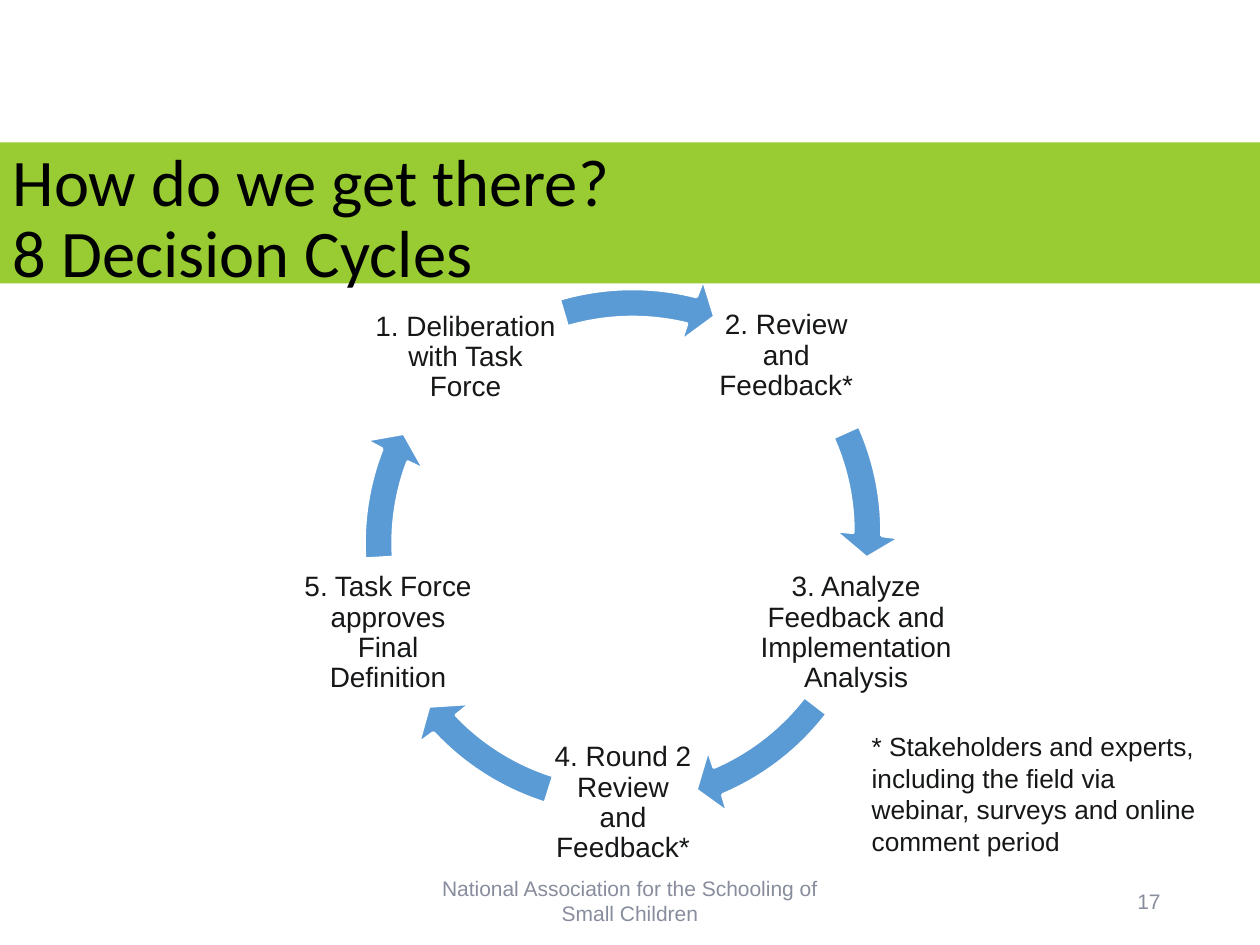
import math
import pptx
import pptx.util
import pptx.oxml
import pptx.oxml.ns
import pptx.dml.color
import pptx.enum.text

Inches = pptx.util.Inches
Pt = pptx.util.Pt
ALIGN = pptx.enum.text.PP_ALIGN
ANCHOR = pptx.enum.text.MSO_ANCHOR
SPACE = pptx.oxml.ns.nsdecls("a")

COLORS = {"band": "99CC33", "arrow": "5B9BD5", "edge": "FFFFFF",
          "title": "000000", "body": "161718", "foot": "888D9E"}

STEPS = [
    ("2. Review and Feedback*", (5.68, 2.24, 1.12, 1.17)),
    ("3. Analyze Feedback and Implementation Analysis", (5.98, 4.44, 1.63, 1.17)),
    ("4. Round 2 Review and Feedback*", (4.36, 5.79, 1.17, 1.17)),
    ("5. Task Force approves Final Definition", (2.38, 4.44, 1.4, 1.17)),
    ("1. Deliberation with Task Force", (2.93, 2.25, 1.53, 1.17)),
]
ARROWS = [
    ((2.75, 2.02), -24.2, 6.2),
    ((2.74, 2.22), 37.5, 72.5),
    ((2.74, 2.22), 107.4, 142.4),
    ((2.74, 2.11), 176.4, 206.7),
    ((2.82, 2.14), 253.5, 289.7),
]
SIDE = 4.4
OUTER, INNER, WIDE, NARROW, TIP = 2.05, 1.82, 2.2, 1.67, 1.94


def tint(name):
    return pptx.dml.color.RGBColor.from_string(COLORS[name])


def assign(item, values):
    for key, value in values.items():
        setattr(item, key, value)


def write(shape, text, size, color, align, anchor, font="Arial", pad=(0.1, 0.05), gap=None):
    frame = shape.text_frame
    side, edge = (Inches(p) for p in pad)
    assign(frame, {"text": text, "word_wrap": True, "vertical_anchor": anchor,
                   "auto_size": pptx.enum.text.MSO_AUTO_SIZE.NONE,
                   "margin_left": side, "margin_right": side,
                   "margin_top": edge, "margin_bottom": edge})
    para = frame.paragraphs[0]
    assign(para, {"alignment": align, "line_spacing": gap})
    for run in para.runs:
        assign(run.font, {"name": font, "size": Pt(size)})
        run.font.color.rgb = tint(color)


def label(slide, box, *args, **more):
    write(slide.shapes.add_textbox(*map(Inches, box)), *args, **more)


def heading(slide, box):
    title = slide.shapes.title
    slide.shapes._spTree.append(title._element)
    assign(title, dict(zip(("left", "top", "width", "height"), map(Inches, box))))
    title.fill.solid()
    title.fill.fore_color.rgb = tint("band")
    write(title, "How do we get there?\v8 Decision Cycles", 38, "title",
          ALIGN.LEFT, ANCHOR.TOP, font="Calibri", gap=0.9)


def outline(start, tip):
    def spot(radius, angle):
        turn = math.radians(angle)
        return (SIDE / 2 + radius * math.cos(turn), SIDE / 2 + radius * math.sin(turn))

    def base(radius):
        return tip - 6.5 + 3 * (radius - NARROW)

    def arc(radius, first, last):
        bend = math.radians(last - first) / 4
        pull = math.atan(4 / 3 * math.tan(bend))
        reach, swing = radius / math.cos(pull), math.degrees(pull)
        return [spot(reach, first + swing), spot(reach, last - swing), spot(radius, last)]

    return [
        ("moveTo", [spot(OUTER, start)]),
        ("cubicBezTo", arc(OUTER, start, base(OUTER))),
        ("lnTo", [spot(WIDE, base(WIDE))]),
        ("lnTo", [spot(TIP, tip)]),
        ("lnTo", [spot(NARROW, base(NARROW))]),
        ("lnTo", [spot(INNER, base(INNER))]),
        ("cubicBezTo", arc(INNER, base(INNER), start)),
        ("close", []),
    ]


def arrow(slide, corner, start, tip):
    left, top = map(Inches, corner)
    side = Inches(SIDE)
    pen = slide.shapes.build_freeform(left, top, scale=1.0)
    pen.add_line_segments([(left + side, top), (left + side, top + side), (left, top + side)])
    shape = pen.convert_to_shape()
    track = shape._element.find(".//" + pptx.oxml.ns.qn("a:path"))
    for child in list(track):
        track.remove(child)
    for kind, points in outline(start, tip):
        marks = "".join(f'<a:pt x="{Inches(x)}" y="{Inches(y)}"/>' for x, y in points)
        track.append(pptx.oxml.parse_xml(f"<a:{kind} {SPACE}>{marks}</a:{kind}>"))
    shape.shadow.inherit = False
    shape.fill.solid()
    shape.fill.fore_color.rgb = tint("arrow")
    shape.line.color.rgb = tint("edge")
    shape.line.width = Pt(2)


def cycle(slide):
    for (text, box), turn in zip(STEPS, ARROWS):
        label(slide, box, text, 16, "body", ALIGN.CENTER, ANCHOR.MIDDLE,
              pad=(0.02, 0.02), gap=0.9)
        arrow(slide, *turn)


def note(slide, box):
    label(slide, box, "* Stakeholders and experts, including the field via webinar, "
          "surveys and online comment period", 15, "body", ALIGN.LEFT, ANCHOR.TOP)


def footer(slide, top, height):
    label(slide, (3.31, top, 3.38, height),
          "National Association for the Schooling of Small Children",
          12, "foot", ALIGN.CENTER, ANCHOR.MIDDLE)
    label(slide, (7.06, top, 2.25, height), "17", 12, "foot", ALIGN.RIGHT, ANCHOR.MIDDLE)


def main():
    deck = pptx.Presentation()
    assign(deck, {"slide_width": Inches(10), "slide_height": Inches(7.5)})
    slide = deck.slides.add_slide(deck.slide_layouts[5])
    footer(slide, 6.95, 0.4)
    cycle(slide)
    note(slide, (6.82, 5.75, 2.84, 1.11))
    heading(slide, (0, 1.13, 10, 1.12))
    deck.save("out.pptx")


if __name__ == "__main__":
    main()
